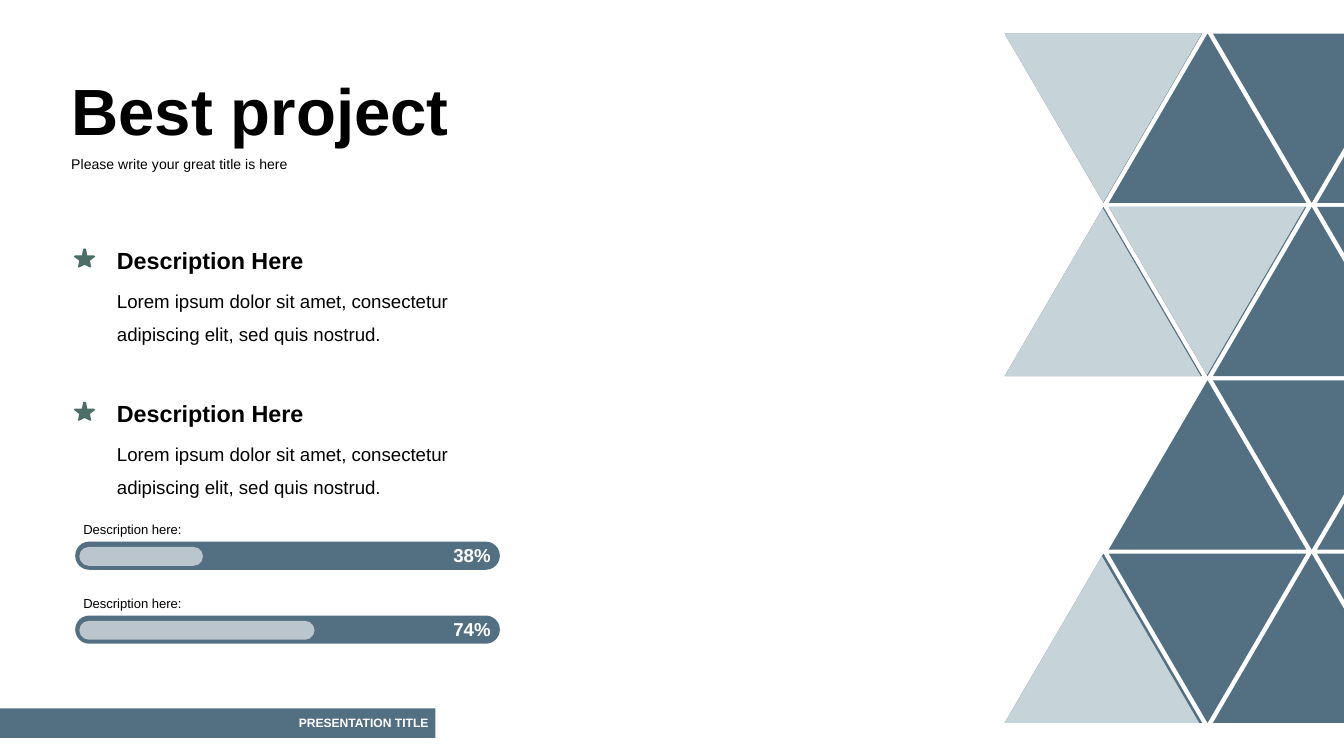
from lxml import etree
from pptx import Presentation
from pptx.dml.color import RGBColor
from pptx.enum.shapes import MSO_SHAPE as Preset
from pptx.enum.text import MSO_ANCHOR as Anchor, MSO_AUTO_SIZE as AutoSize, PP_ALIGN as Align
from pptx.oxml.ns import qn
from pptx.util import Inches, Pt

WIDTH = 10
HEIGHT = WIDTH * 9 / 16
STEEL, MIST, GREEN, WHITE, BLACK = "536F82", "C6D3D8", "4B6F68", "FFFFFF", "000000"

TITLE = "Best project"
SUBTITLE = "Please write your great title is here"
FOOTER = "PRESENTATION TITLE"
LOREM = "Lorem ipsum dolor sit amet, consectetur adipiscing elit, sed quis nostrud."
# heading, heading width, body
POINTS = [("Description Here", 2.07, LOREM), ("Description Here", 2.48, LOREM)]
# label, value, width of the filled part
BARS = [("Description here:", "38%", 0.92), ("Description here:", "74%", 1.75)]

# Blunt-tipped star: the right half from the top down, mirrored about x = 0
STAR_HALF = [(0.01, 0), (0.02, 0.05), (0.07, 0.05), (0.08, 0.06),
             (0.04, 0.09), (0.05, 0.14), (0.04, 0.14), (0, 0.12)]

# Triangle mosaic: columns used in each row, and the scale of each light tile
ROWS = [range(0, 4), range(0, 4), range(1, 4), range(0, 4)]
LIGHT_TILES = {(0, 0): 0.998, (1, 0): 0.993, (1, 1): 0.993, (3, 0): 0.985}
FIRST_X, FIRST_Y = 8.21, 0.25
COLUMN_STEP, ROW_STEP = 0.775, 1.29
HALF_BASE, TILE_HEIGHT = 0.735, 1.26


def color(value):
    return RGBColor.from_string(value)


def paint(shape, fill, opacity=None):
    shape.shadow.inherit = False
    shape.fill.solid()
    shape.fill.fore_color.rgb = color(fill)
    shape.line.fill.background()
    if opacity:
        tint = shape.fill._xPr.find(qn("a:solidFill"))[0]
        etree.SubElement(tint, qn("a:alpha"), val=str(opacity * 1000))


def add_preset(page, preset, left, top, width, height, fill, opacity=None):
    shape = page.shapes.add_shape(
        preset, Inches(left), Inches(top), Inches(width), Inches(height))
    paint(shape, fill, opacity)
    if preset == Preset.ROUNDED_RECTANGLE:
        shape.adjustments[0] = 0.5
    return shape


def write(shape, text, size, ink=BLACK, bold=False, align=Align.LEFT, spacing=None):
    frame = shape.text_frame
    frame.word_wrap = True
    frame.margin_left = frame.margin_right = Inches(0.05)
    frame.margin_top = frame.margin_bottom = Inches(0.02)
    para = frame.paragraphs[0]
    para.text = text
    para.alignment = align
    para.line_spacing = spacing
    para.font.name = "Arial"
    para.font.size = Pt(size)
    para.font.bold = bold
    para.font.color.rgb = color(ink)


def add_text(page, left, top, width, height, text, size, **style):
    box = page.shapes.add_textbox(Inches(left), Inches(top), Inches(width), Inches(height))
    write(box, text, size, **style)
    box.text_frame.auto_size = AutoSize.SHAPE_TO_FIT_TEXT


def star(center, top):
    left_half = [(-x, y) for x, y in reversed(STAR_HALF[:-1])]
    return [(center + x, top + y) for x, y in STAR_HALF + left_half]


def triangle(row, column, scale=1):
    """Corners of a tile, scaled about its left corner."""
    center = FIRST_X + column * COLUMN_STEP
    top = FIRST_Y + row * ROW_STEP
    base, tip = top, top + TILE_HEIGHT
    if (row + column) % 2:
        base, tip = tip, base
    left = center - HALF_BASE
    return [(left, base),
            (left + 2 * HALF_BASE * scale, base),
            (left + HALF_BASE * scale, base + (tip - base) * scale)]


def clip_right(points):
    """Cut a polygon at the right edge of the page."""
    kept = []
    for (x1, y1), (x2, y2) in zip(points, points[1:] + points[:1]):
        if x1 <= WIDTH:
            kept.append((x1, y1))
        if (x1 <= WIDTH) != (x2 <= WIDTH):
            kept.append((WIDTH, y1 + (y2 - y1) * (WIDTH - x1) / (x2 - x1)))
    return kept


def add_polygons(page, polygons, fill):
    """Draw all polygons as one freeform."""
    outlines = [[(Inches(x), Inches(y)) for x, y in clip_right(points)] for points in polygons]
    builder = page.shapes.build_freeform(*outlines[0][0])
    for number, outline in enumerate(outlines):
        if number:
            builder.move_to(*outline[0])
        builder.add_line_segments(outline[1:], close=True)
    paint(builder.convert_to_shape(), fill)


def main():
    deck = Presentation()
    deck.slide_width, deck.slide_height = Inches(WIDTH), Inches(HEIGHT)
    page = deck.slides.add_slide(deck.slide_layouts[6])

    add_text(page, 0.48, 0.5, 3.46, 0.64, TITLE, 35, bold=True)
    add_text(page, 0.48, 1.14, 2.31, 0.18, SUBTITLE, 7.5)

    for number, (heading, width, body) in enumerate(POINTS):
        top = 1.81 + number * 1.14
        add_polygons(page, [star(0.63, top + 0.04)], GREEN)
        add_text(page, 0.82, top + 0.24, 2.79, 0.47, body, 10, spacing=1.5)
        add_text(page, 0.82, top, width, 0.26, heading, 12.5, bold=True)

    for number, (label, value, filled) in enumerate(BARS):
        top = 4.03 + number * 0.55
        add_preset(page, Preset.ROUNDED_RECTANGLE, 0.56, top, 3.16, 0.21, STEEL)
        add_preset(page, Preset.ROUNDED_RECTANGLE, 0.59, top + 0.04, filled, 0.14, WHITE, 60)
        add_text(page, 0.57, top - 0.17, 1.06, 0.17, label, 7)
        add_text(page, 3.2, top, 0.5, 0.22, value, 10,
                 ink=WHITE, bold=True, align=Align.RIGHT)

    tiles = [(row, column) for row, columns in enumerate(ROWS) for column in columns]
    # The dark tiles leave a thin rim beside the light ones
    add_polygons(page, [triangle(*tile) for tile in tiles], STEEL)
    add_polygons(page, [triangle(*tile, scale) for tile, scale in LIGHT_TILES.items()], MIST)

    footer = add_preset(page, Preset.RECTANGLE, 0, 5.27, 3.24, 0.22, STEEL)
    write(footer, FOOTER, 6.5, ink=WHITE, bold=True, align=Align.RIGHT, spacing=0.9)
    footer.text_frame.vertical_anchor = Anchor.MIDDLE

    deck.save("out.pptx")


if __name__ == "__main__":
    main()
